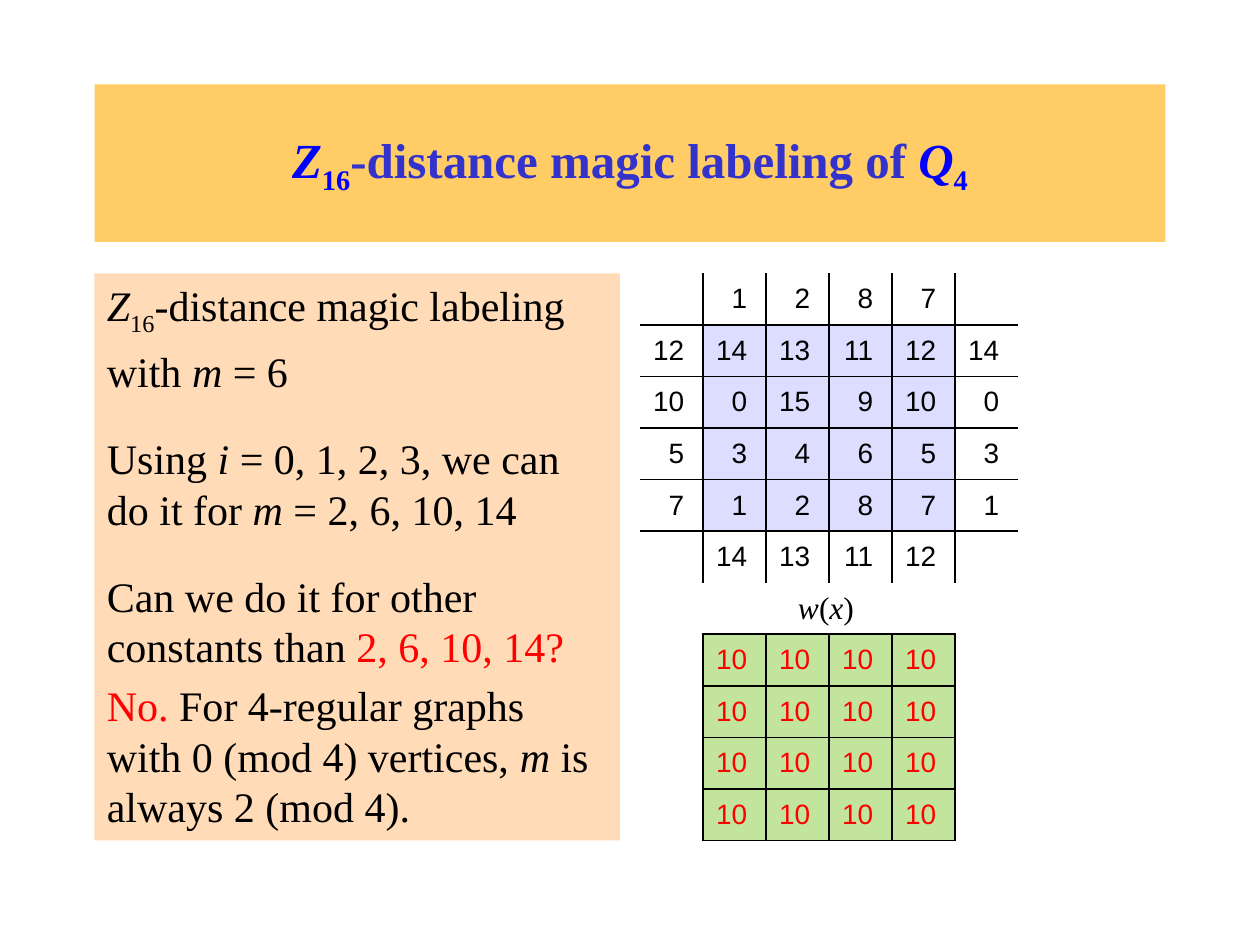
"""Build the slide on distance magic labeling of the hypercube Q4."""
from lxml import etree
from pptx import Presentation
from pptx.dml.color import RGBColor
from pptx.enum.text import MSO_ANCHOR as ANCHOR, PP_ALIGN as ALIGN
from pptx.oxml.ns import qn
from pptx.util import Inches, Pt

BLACK = RGBColor(0x00, 0x00, 0x00)
RED = RGBColor(0xFF, 0x00, 0x00)
BLUE = RGBColor(0x00, 0x00, 0xFF)
INDIGO = RGBColor(0x33, 0x33, 0xCC)
GOLD = RGBColor(0xFF, 0xCC, 0x66)
PEACH = RGBColor(0xFF, 0xDB, 0xB7)
LAVENDER = RGBColor(0xDD, 0xDD, 0xFF)
GREEN = RGBColor(0xC2, 0xE4, 0x9C)
SERIF = "Times New Roman"
NO_STYLE = "{2D5ABB26-0587-4C30-8999-92F81FD0307C}"


def add_runs(p, runs):
    """Add (text, style, colour) runs; style is "i" for italic, "sub" for subscript."""
    for text, style, color in runs:
        r = p.add_run()
        r.text = text
        r.font.color.rgb = color
        if style == "i":
            r.font.italic = True
        elif style == "sub":
            r.font._element.set("baseline", "-25000")


def set_borders(cell, edges):
    """Draw 1 pt black lines on the sides marked true and clear the others."""
    tcPr = cell._tc.get_or_add_tcPr()
    for i, (side, drawn) in enumerate(edges.items()):
        ln = etree.Element(qn(f"a:ln{side}"), w=str(Pt(1)))
        if drawn:
            fill = etree.SubElement(ln, qn("a:solidFill"))
            etree.SubElement(fill, qn("a:srgbClr"), val=str(BLACK))
        else:
            etree.SubElement(ln, qn("a:noFill"))
        tcPr.insert(i, ln)


prs = Presentation()
prs.slide_width, prs.slide_height = Inches(10), Inches(7.5)
s = prs.slides.add_slide(prs.slide_layouts[5])

title = s.shapes.title
title.left, title.top = Inches(0.75), Inches(0.67)
title.width, title.height = Inches(8.5), Inches(1.25)
title.fill.solid()
title.fill.fore_color.rgb = GOLD
title.text_frame.vertical_anchor = ANCHOR.MIDDLE
p = title.text_frame.paragraphs[0]
p.alignment = ALIGN.CENTER
p.font.name, p.font.size, p.font.bold = SERIF, Pt(28), True
add_runs(p, [("Z", "i", BLUE), ("16", "sub", BLUE),
             ("-distance magic labeling of ", "", INDIGO),
             ("Q", "i", BLUE), ("4", "sub", BLUE)])

NOTES = [
    (0, [("Z", "i", BLACK), ("16", "sub", BLACK), ("-distance magic labeling", "", BLACK)]),
    (5, [("with ", "", BLACK), ("m", "i", BLACK), (" = 6", "", BLACK)]),
    (21, [("Using ", "", BLACK), ("i", "i", BLACK),
          (" = 0, 1, 2, 3, we can do it for ", "", BLACK),
          ("m", "i", BLACK), (" = 2, 6, 10, 14", "", BLACK)]),
    (21, [("Can we do it for other constants than ", "", BLACK),
          ("2, 6, 10, 14?", "", RED)]),
    (5, [("No. ", "", RED), ("For 4-regular graphs with 0 (mod 4) vertices, ", "", BLACK),
         ("m ", "i", BLACK), ("is always 2 (mod 4).", "", BLACK)]),
]
body = s.shapes.add_textbox(Inches(0.75), Inches(2.17), Inches(4.17), Inches(4.5))
body.fill.solid()
body.fill.fore_color.rgb = PEACH
tf = body.text_frame
tf.word_wrap = True
for i, (gap, runs) in enumerate(NOTES):
    p = tf.add_paragraph() if i else tf.paragraphs[0]
    p.space_before = Pt(gap)
    p.font.name, p.font.size = SERIF, Pt(24)
    add_runs(p, runs)

LABELS = [[14, 13, 11, 12], [0, 15, 9, 10], [3, 4, 6, 5], [1, 2, 8, 7]]
WRAPPED = [[row[-1], *row, row[0]] for row in LABELS]
GRID = [["", *LABELS[-1], ""], *WRAPPED, ["", *LABELS[0], ""],
        [""] * 6, *[["", *[10] * 4, ""] for _ in range(4)]]

frame = s.shapes.add_table(len(GRID), 6, Inches(5.08), Inches(2.17), Inches(3), Inches(4.5))
table = frame.table
table.first_row = table.horz_banding = False
table._tbl.tblPr.find(qn("a:tableStyleId")).text = NO_STYLE
for y, row in enumerate(GRID):
    for x, value in enumerate(row):
        cell = table.cell(y, x)
        cell.vertical_anchor = ANCHOR.MIDDLE
        cell.margin_right = Inches(0.15)
        inner = 1 <= x <= 4
        if inner and 1 <= y <= 4:
            cell.fill.solid()
            cell.fill.fore_color.rgb = LAVENDER
        elif inner and y >= 7:
            cell.fill.solid()
            cell.fill.fore_color.rgb = GREEN
        else:
            cell.fill.background()
        set_borders(cell, {
            "L": y != 6 and x > 0,
            "R": y != 6 and x < 5,
            "T": 1 <= y <= 5 or (inner and y >= 7),
            "B": y <= 4 or (inner and y >= 6),
        })
        p = cell.text_frame.paragraphs[0]
        p.alignment = ALIGN.RIGHT
        p.font.name, p.font.size = "Arial", Pt(16)
        if value != "":
            add_runs(p, [(str(value), "", RED if y >= 7 else BLACK)])

weight = table.cell(6, 1)
weight.merge(table.cell(6, 4))
p = weight.text_frame.paragraphs[0]
p.alignment = ALIGN.CENTER
p.font.name, p.font.size = SERIF, Pt(18)
add_runs(p, [("w", "i", BLACK), ("(", "", BLACK), ("x", "i", BLACK), (")", "", BLACK)])

prs.save("out.pptx")
